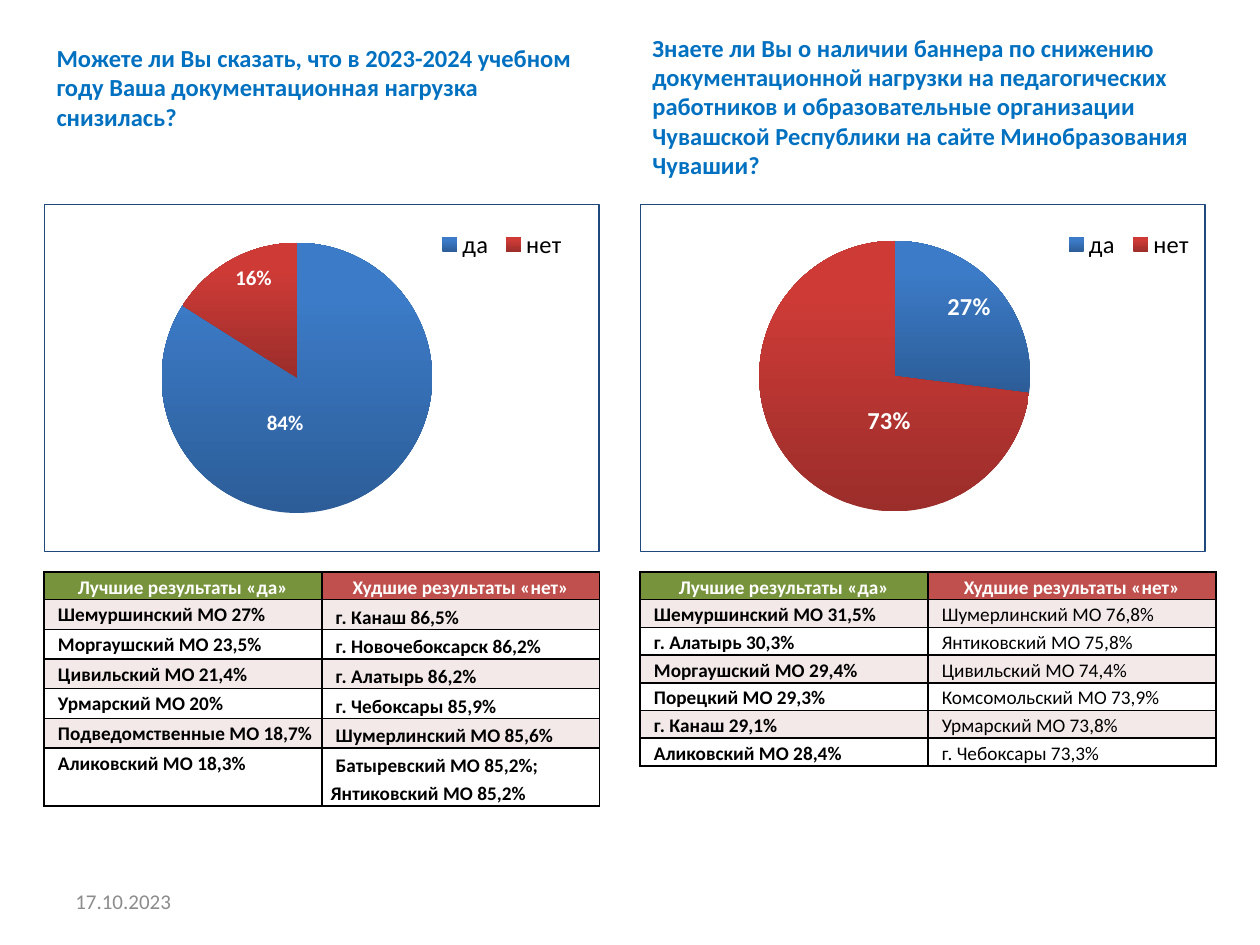
from lxml.etree import SubElement
from pptx import Presentation
from pptx.chart.data import CategoryChartData
from pptx.dml.color import RGBColor
from pptx.enum.chart import XL_CHART_TYPE, XL_LABEL_POSITION, XL_LEGEND_POSITION
from pptx.enum.text import MSO_ANCHOR, PP_ALIGN
from pptx.oxml import parse_xml
from pptx.oxml.ns import nsdecls, qn
from pptx.util import Inches, Pt


class Theme:
    font = "Calibri"
    title, date, white, black = "0070C0", "8C8C8C", "FFFFFF", "000000"
    chart_border = "1F497D"
    header_fills = ("77933C", "C0504D")
    band_fills = ("F4E9E9", "FFFFFF")
    slice_gradients = (("2C5D98", "3C7BC7"), ("9B2D2A", "CE3B37"))  # bottom, top
    title_size, legend_size, table_size, date_size = 14, 14, 11, 12


ANSWERS = ("да", "нет")
TABLE_HEADER = ("Лучшие результаты «да»", "Худшие результаты «нет»")
DATE = "17.10.2023"
CHART_TOP, CHART_HEIGHT, TABLE_TOP, ROW_HEIGHT = 1.62, 2.76, 4.54, 0.22
INSIDE, CENTER = XL_LABEL_POSITION.INSIDE_END, XL_LABEL_POSITION.CENTER

# Layouts are fractions of the chart: x, y, width, height.
# Labels hold a position and an offset from it, one per answer.
QUESTIONS = [
    dict(
        title="Можете ли Вы сказать, что в 2023-2024 учебном году Ваша "
              "документационная нагрузка снизилась?",
        title_box=(0.35, 0.29, 4.42, 0.79), chart_width=4.41, table_width=4.41,
        values=(0.84, 0.16), plot=(0.21, 0.11, 0.49, 0.78),
        legend=(0.7, 0.06, 0.25, 0.11), label_size=12,
        labels=((CENTER, -0.08, -0.04), (INSIDE, 0, 0)),
        worst_bold=True, worst_spacing=Pt(16.2), worst_top=0.01,
        rows=[
            ("Шемуршинский МО 27%", "г. Канаш 86,5%"),
            ("Моргаушский МО 23,5%", "г. Новочебоксарск 86,2%"),
            ("Цивильский МО 21,4%", "г. Алатырь 86,2%"),
            ("Урмарский МО 20%", "г. Чебоксары 85,9%"),
            ("Подведомственные МО 18,7%", "Шумерлинский МО 85,6%"),
            ("Аликовский МО 18,3%", "Батыревский МО 85,2%; Янтиковский МО 85,2%"),
        ],
    ),
    dict(
        title="Знаете ли Вы о наличии баннера по снижению документационной "
              "нагрузки на педагогических работников и образовательные "
              "организации Чувашской Республики на сайте Минобразования Чувашии?",
        title_box=(5.08, 0.21, 4.57, 1.26), chart_width=4.49, table_width=4.57,
        values=(0.27, 0.73), plot=(0.21, 0.1, 0.48, 0.79),
        legend=(0.74, 0.06, 0.25, 0.11), label_size=14,
        labels=((INSIDE, 0, 0), (CENTER, 0.08, 0)),
        worst_bold=False, worst_spacing=1.15, worst_top=0,
        rows=[
            ("Шемуршинский МО 31,5%", "Шумерлинский МО 76,8%"),
            ("г. Алатырь 30,3%", "Янтиковский МО 75,8%"),
            ("Моргаушский МО 29,4%", "Цивильский МО 74,4%"),
            ("Порецкий МО 29,3%", "Комсомольский МО 73,9%"),
            ("г. Канаш 29,1%", "Урмарский МО 73,8%"),
            ("Аликовский МО 28,4%", "г. Чебоксары 73,3%"),
        ],
    ),
]


def style_font(font, size, color, bold=False):
    font.name, font.size, font.bold = Theme.font, Pt(size), bold
    font.color.rgb = RGBColor.from_string(color)


def add_text(slide, box, text, size, color, bold=False, anchor=MSO_ANCHOR.TOP):
    frame = slide.shapes.add_textbox(*map(Inches, box)).text_frame
    frame.word_wrap, frame.vertical_anchor, frame.text = True, anchor, text
    style_font(frame.paragraphs[0].runs[0].font, size, color, bold)


def manual_layout(modes, **fractions):
    layout = parse_xml(f"<c:layout {nsdecls('c')}><c:manualLayout/></c:layout>")
    for name, value in {**modes, **fractions}.items():
        SubElement(layout[0], qn(f"c:{name}")).set("val", str(value))
    return layout


def edge_layout(x, y, w, h, **target):
    return manual_layout({**target, "xMode": "edge", "yMode": "edge"}, x=x, y=y, w=w, h=h)


def add_border(chart):
    chart._chartSpace.find(qn("c:chart")).addnext(parse_xml(
        f'<c:spPr {nsdecls("c", "a")}><a:noFill/><a:ln w="{Pt(0.75)}"><a:solidFill>'
        f'<a:srgbClr val="{Theme.chart_border}"/></a:solidFill></a:ln></c:spPr>'))


def add_pie(slide, question):
    data = CategoryChartData(number_format="0%")
    data.categories = ANSWERS
    data.add_series("Ответы", question["values"])
    chart = slide.shapes.add_chart(
        XL_CHART_TYPE.PIE, Inches(question["title_box"][0]), Inches(CHART_TOP),
        Inches(question["chart_width"]), Inches(CHART_HEIGHT), data).chart
    chart.has_title = False
    style_font(chart.font, 18, Theme.black)
    add_border(chart)

    chart.has_legend = True
    legend = chart.legend
    legend.position, legend.include_in_layout = XL_LEGEND_POSITION.TOP, False
    style_font(legend.font, Theme.legend_size, Theme.black)
    legend_element = legend._element
    plot_area = chart._chartSpace.find(".//" + qn("c:plotArea"))
    for element in legend_element.findall(qn("c:layout")):
        legend_element.remove(element)
    for element in plot_area.findall(qn("c:layout")):
        plot_area.remove(element)
    legend_element.find(qn("c:legendPos")).addnext(edge_layout(*question["legend"]))
    plot_area.insert(0, edge_layout(*question["plot"], layoutTarget="inner"))

    plot = chart.plots[0]
    plot.vary_by_categories = True
    series = plot.series[0]
    slices = zip(Theme.slice_gradients, question["labels"])
    for index, (gradient, (position, dx, dy)) in enumerate(slices):
        point = series.points[index]
        fill = point.format.fill
        fill.gradient()
        fill.gradient_angle = 90
        for stop, color, place in zip(fill.gradient_stops, gradient, (0, 0.8)):
            stop.color.rgb, stop.position = RGBColor.from_string(color), place
        label = point.data_label
        style_font(label.font, question["label_size"], Theme.white, True)
        label.position = position
        if dx or dy:
            element = series._element.findall(".//" + qn("c:dLbl"))[index]
            element.insert(1, manual_layout({}, x=dx, y=dy))


def format_cell(cell, text, fill, color, bold, spacing=1.15, top=0, header=False):
    cell.fill.solid()
    cell.fill.fore_color.rgb = RGBColor.from_string(fill)
    cell.margin_left = cell.margin_right = Inches(0.07)
    cell.margin_top, cell.margin_bottom = Inches(top), 0
    cell.text_frame.text = text
    paragraph = cell.text_frame.paragraphs[0]
    paragraph.line_spacing = spacing
    if header:
        paragraph.alignment = PP_ALIGN.CENTER
    else:
        paragraph._p.get_or_add_pPr().set("indent", str(Inches(0.04)))
    style_font(paragraph.runs[0].font, Theme.table_size, color, bold)
    properties = cell._tc.get_or_add_tcPr()
    for index, side in enumerate(("lnL", "lnR", "lnT", "lnB")):
        properties.insert(index, parse_xml(
            f'<a:{side} {nsdecls("a")} w="{Pt(1)}"><a:solidFill>'
            f'<a:srgbClr val="{Theme.black}"/></a:solidFill></a:{side}>'))


def add_results(slide, question):
    rows = question["rows"]
    table = slide.shapes.add_table(
        len(rows) + 1, 2, Inches(question["title_box"][0]), Inches(TABLE_TOP),
        Inches(question["table_width"]), Inches(ROW_HEIGHT * (len(rows) + 1))).table
    table.first_row = table.horz_banding = False
    for column, text in enumerate(TABLE_HEADER):
        format_cell(table.cell(0, column), text, Theme.header_fills[column],
                    Theme.white, True, header=True)
    for index, (best, worst) in enumerate(rows):
        fill = Theme.band_fills[index % 2]
        format_cell(table.cell(index + 1, 0), best, fill, Theme.black, True)
        format_cell(table.cell(index + 1, 1), worst, fill, Theme.black,
                    question["worst_bold"], question["worst_spacing"], question["worst_top"])


def main():
    presentation = Presentation()
    presentation.slide_width, presentation.slide_height = Inches(10), Inches(7.5)
    slide = presentation.slides.add_slide(presentation.slide_layouts[6])
    for question in QUESTIONS:
        add_text(slide, question["title_box"], question["title"],
                 Theme.title_size, Theme.title, True)
        add_pie(slide, question)
        add_results(slide, question)
    add_text(slide, (0.5, 6.95, 2.33, 0.4), DATE, Theme.date_size, Theme.date,
             anchor=MSO_ANCHOR.MIDDLE)
    presentation.save("out.pptx")


if __name__ == "__main__":
    main()
